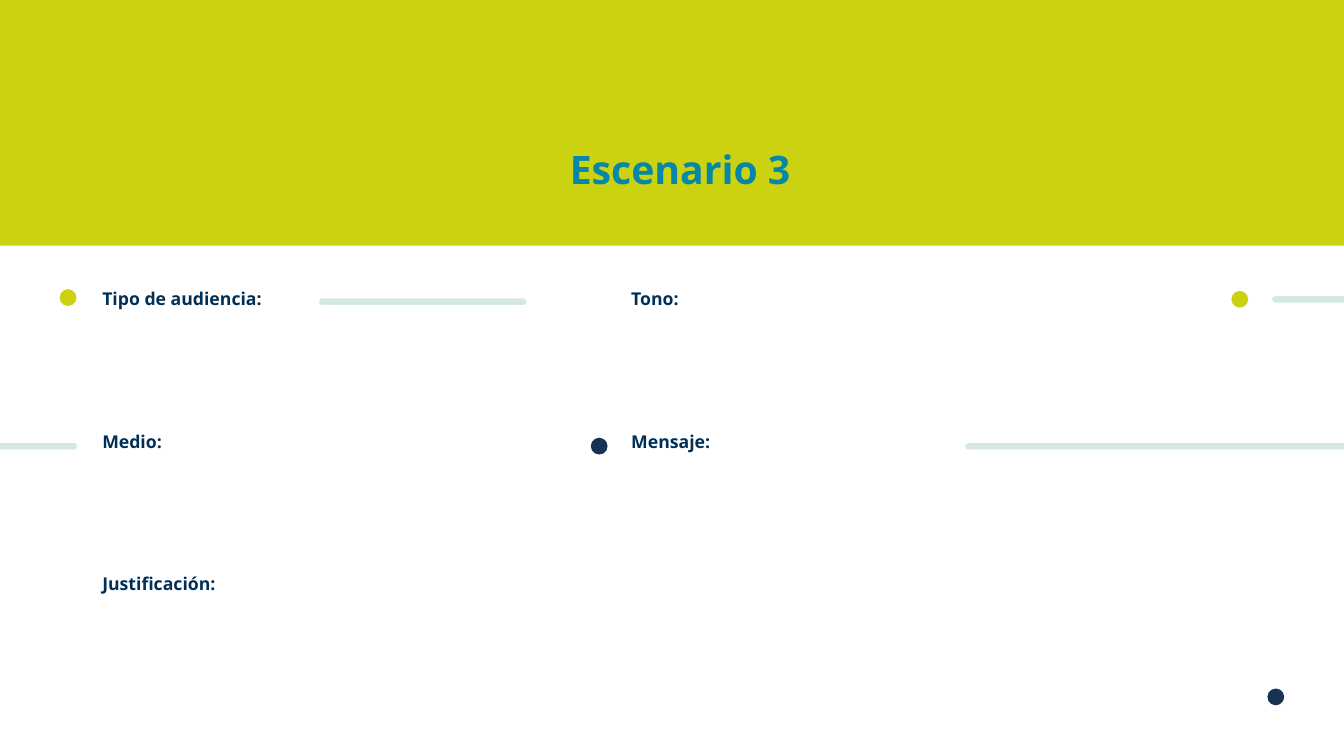
from pptx import Presentation
from pptx.dml.color import RGBColor
from pptx.enum.shapes import MSO_SHAPE as SHAPE
from pptx.enum.text import MSO_ANCHOR as ANCHOR, MSO_AUTO_SIZE as FIT, PP_ALIGN as ALIGN
from pptx.util import Pt

LIME = RGBColor(0xCB, 0xD2, 0x11)
TEAL = RGBColor(0x06, 0x87, 0xA7)
NAVY = RGBColor(0x00, 0x30, 0x57)
DARK = RGBColor(0x17, 0x32, 0x54)
MINT = RGBColor(0xD6, 0xE8, 0xE3)


def write(tf, text, size, color, font="Open Sans", align=ALIGN.LEFT,
          anchor=ANCHOR.TOP, spacing=1.0, before=0, inset=(7.2, 3.6)):
    """Put one bold paragraph into a text frame."""
    tf.word_wrap = True
    tf.auto_size = FIT.NONE
    tf.vertical_anchor = anchor
    tf.margin_left = tf.margin_right = Pt(inset[0])
    tf.margin_top = tf.margin_bottom = Pt(inset[1])
    p = tf.paragraphs[0]
    p.alignment = align
    p.line_spacing = spacing
    p.space_before = Pt(before)
    r = p.add_run()
    r.text = text
    r.font.name = font
    r.font.size = Pt(size)
    r.font.bold = True
    r.font.color.rgb = color


class SlideBuilder:
    DOT = 12
    BAR = 3.6

    def __init__(self, s):
        self.s = s

    def shape(self, kind, x, y, w, h, color):
        sp = self.s.shapes.add_shape(kind, Pt(x), Pt(y), Pt(w), Pt(h))
        sp.shadow.inherit = False
        sp.fill.solid()
        sp.fill.fore_color.rgb = color
        sp.line.fill.background()
        return sp

    def title(self, text, x, y, w, h):
        sp = self.s.shapes.title
        sp.left, sp.top, sp.width, sp.height = Pt(x), Pt(y), Pt(w), Pt(h)
        write(sp.text_frame, text, 28, TEAL, align=ALIGN.CENTER,
              anchor=ANCHOR.BOTTOM, inset=(0, 0))
        # Bring the title in front of the band
        sp.element.getparent().append(sp.element)

    def label(self, text, x, y, w):
        sp = self.s.shapes.add_textbox(Pt(x), Pt(y), Pt(w), Pt(19.5))
        write(sp.text_frame, text, 12.6, NAVY, spacing=0.7, before=10)

    def dot(self, x, y, color):
        self.shape(SHAPE.OVAL, x, y, self.DOT, self.DOT, color)

    def bar(self, x, y, w):
        sp = self.shape(SHAPE.ROUNDED_RECTANGLE, x, y, w, self.BAR, MINT)
        sp.adjustments[0] = 0.5
        sp.line.color.rgb = MINT
        sp.line.width = Pt(1)


def main():
    prs = Presentation()
    prs.slide_width, prs.slide_height = Pt(960), Pt(540)
    slide = SlideBuilder(prs.slides.add_slide(prs.slide_layouts[5]))

    # Header
    slide.shape(SHAPE.RECTANGLE, 0, -2, 960, 177.5, LIME)
    slide.title("Escenario 3", 66, 76.5, 839.5, 61)

    # Labels in two columns
    columns = [
        (66, 309.5, ["Tipo de audiencia:", "Medio:", "Justificación:"]),
        (443.8, 461.5, ["Tono:", "Mensaje:"]),
    ]
    for x, w, labels in columns:
        for row, text in enumerate(labels):
            slide.label(text, x, 206.5 + 101.8 * row, w)

    # Decorative bars
    for x, y, w in [(228.5, 213.7, 147), (-2, 317, 56.5),
                    (690, 317, 275.5), (909.2, 212, 56.5)]:
        slide.bar(x, y, w)

    # Decorative dots
    for x, y, color in [(42.6, 206.6, LIME), (422, 312.7, DARK),
                        (879.6, 207.8, LIME), (905.3, 491.8, DARK)]:
        slide.dot(x, y, color)

    prs.save("out.pptx")


if __name__ == "__main__":
    main()
